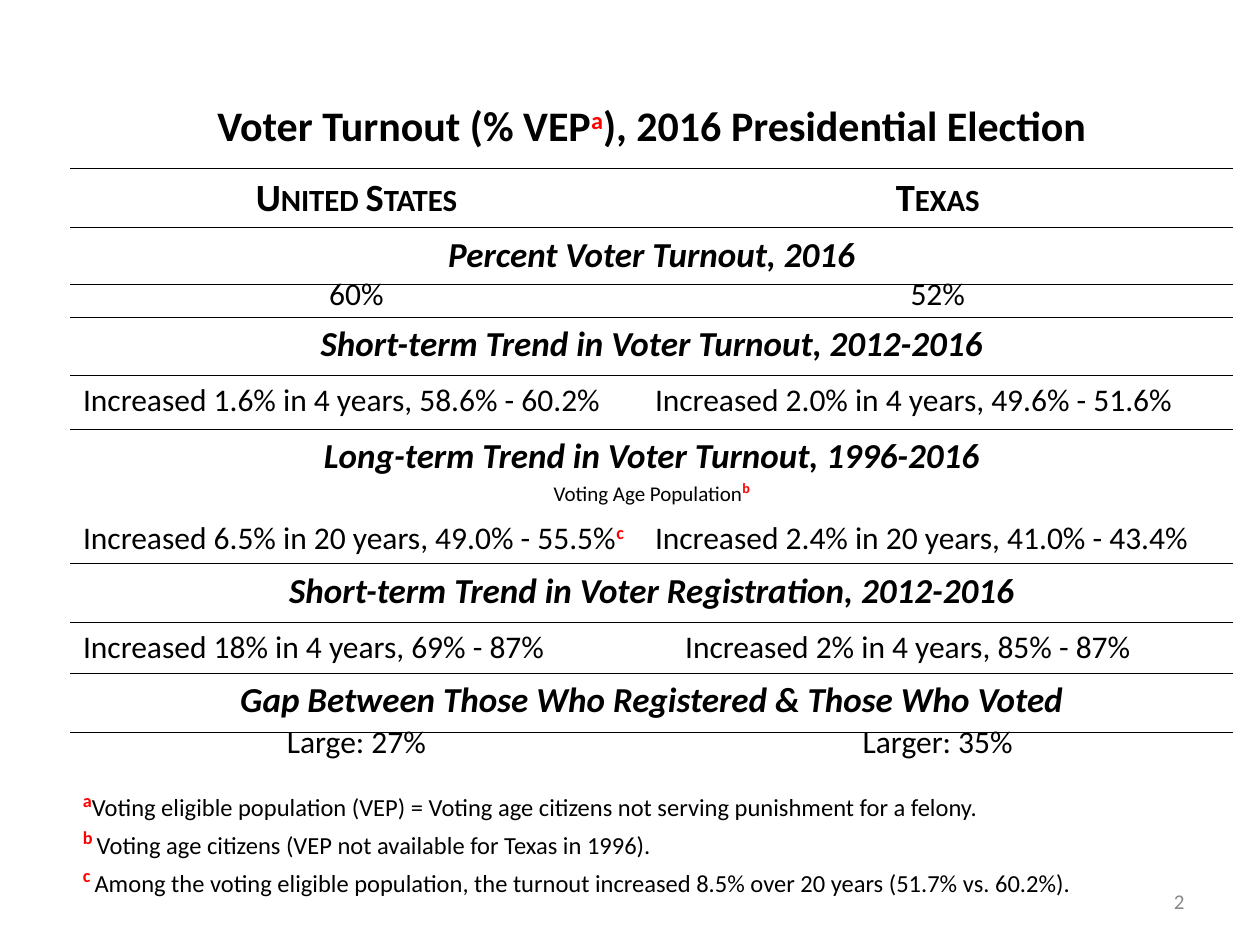
import dataclasses

import lxml.etree
import pptx
import pptx.dml.color
import pptx.enum.text
import pptx.oxml.ns
import pptx.util

Cm = pptx.util.Cm
ALIGN = pptx.enum.text.PP_ALIGN
ANCHOR = pptx.enum.text.MSO_ANCHOR


@dataclasses.dataclass(frozen=True)
class Style:
    """Look of one run of text."""
    size: int
    color: str = "000000"
    bold: bool = False
    italic: bool = False
    raised: bool = False
    small_caps: bool = False


@dataclasses.dataclass(frozen=True)
class Theme:
    """Font, rule and text styles of the slide."""
    font: str = "Calibri"
    rule_color: str = "000000"
    rule_width: float = 0.25
    title: Style = Style(24, bold=True)
    title_mark: Style = Style(24, "FF0000", bold=True, raised=True)
    place: Style = Style(22, bold=True, small_caps=True)
    section: Style = Style(20, bold=True, italic=True)
    subtitle: Style = Style(12)
    subtitle_mark: Style = Style(14, "FF0000", bold=True, raised=True)
    body: Style = Style(18)
    mark: Style = Style(18, "FF0000", bold=True, raised=True)
    note: Style = Style(14)
    page: Style = Style(12, "898989")


THEME = Theme()
CENTER, LEFT = ALIGN.CENTER, ALIGN.LEFT


def section(height, title, *more):
    """Describe a row with one heading across all columns."""
    return height, CENTER, 1, [(0, 2, [[(title, THEME.section)], *more])], True


def pair(height, us, texas, style=THEME.body, align=LEFT, spacing=1, split=1, ruled=True):
    """Describe a row with one entry for each place; split is the column where Texas starts."""
    us_runs = us if isinstance(us, list) else [(us, style)]
    cells = [(0, split - 1, [us_runs]), (split, 2, [[(texas, style)]])]
    return height, align, spacing, cells, ruled


COLUMNS = [11.53, 0.33, 11.3]
LONG_TERM = section(0.89, "Long-term Trend in Voter Turnout, 1996-2016",
                    [("Voting Age Population", THEME.subtitle), ("b", THEME.subtitle_mark)])
ROWS = [
    (1.47, CENTER, 1, [(0, 2, [[("Voter Turnout (% VEP", THEME.title), ("a", THEME.title_mark),
                                ("), 2016 Presidential Election", THEME.title)]])], True),
    pair(0.99, "United States", "Texas", THEME.place, CENTER),
    section(1.14, "Percent Voter Turnout, 2016"),
    pair(0.66, "60%", "52%", align=CENTER, spacing=0.5),
    section(1.17, "Short-term Trend in Voter Turnout, 2012-2016"),
    pair(1.09, "Increased 1.6% in 4 years, 58.6% - 60.2%", "Increased 2.0% in 4 years, 49.6% - 51.6%"),
    (*LONG_TERM[:-1], False),
    pair(0.66, [("Increased 6.5% in 20 years, 49.0% - 55.5%", THEME.body), ("c", THEME.mark)],
         "Increased 2.4% in 20 years, 41.0% - 43.4%"),
    section(1.19, "Short-term Trend in Voter Registration, 2012-2016"),
    pair(0.97, "Increased 18% in 4 years, 69% - 87%", "Increased 2% in 4 years, 85% - 87%", split=2),
    section(1.19, "Gap Between Those Who Registered & Those Who Voted"),
    pair(0.91, "Large: 27%", "Larger: 35%", align=CENTER, spacing=0.5, ruled=False),
]

NOTES = [
    ("a", "Voting eligible population (VEP) = Voting age citizens not serving punishment for a felony."),
    ("b ", "Voting age citizens (VEP not available for Texas in 1996)."),
    ("c ", "Among the voting eligible population, the turnout increased 8.5% over 20 years (51.7% vs. 60.2%)."),
]


def write(frame, paragraphs, align=LEFT, spacing=None):
    """Fill a text frame with paragraphs of (text, style) runs."""
    frame.word_wrap = True
    for index, runs in enumerate(paragraphs):
        paragraph = frame.add_paragraph() if index else frame.paragraphs[0]
        paragraph.alignment = align
        if spacing:
            paragraph.line_spacing = spacing
        for text, style in runs:
            run = paragraph.add_run()
            run.text = text
            run.font.name = THEME.font
            run.font.size = pptx.util.Pt(style.size)
            run.font.bold, run.font.italic = style.bold, style.italic
            run.font.color.rgb = pptx.dml.color.RGBColor.from_string(style.color)
            properties = run._r.get_or_add_rPr()
            if style.raised:
                properties.set("baseline", "30000")
            if style.small_caps:
                properties.set("cap", "small")


def set_borders(cell, ruled_above, ruled_below):
    """Give a cell its horizontal rules and clear its other sides."""
    qn = pptx.oxml.ns.qn
    sides = [("a:lnL", False), ("a:lnR", False), ("a:lnT", ruled_above), ("a:lnB", ruled_below)]
    for index, (tag, ruled) in enumerate(sides):
        line = lxml.etree.Element(qn(tag), w=str(pptx.util.Pt(THEME.rule_width)))
        if ruled:
            fill = lxml.etree.SubElement(line, qn("a:solidFill"))
            lxml.etree.SubElement(fill, qn("a:srgbClr"), val=THEME.rule_color)
        else:
            lxml.etree.SubElement(line, qn("a:noFill"))
        cell._tc.get_or_add_tcPr().insert(index, line)


def add_turnout_table(slide, left, top):
    """Place the table comparing the two electorates."""
    width, height = sum(COLUMNS), sum(row[0] for row in ROWS)
    table = slide.shapes.add_table(len(ROWS), len(COLUMNS), Cm(left), Cm(top), Cm(width), Cm(height)).table
    table.first_row = table.horz_banding = False
    for column, column_width in zip(table.columns, COLUMNS):
        column.width = Cm(column_width)
    ruled_above = False
    for index, (row_height, align, spacing, cells, ruled) in enumerate(ROWS):
        table.rows[index].height = Cm(row_height)
        for cell in table.rows[index].cells:
            cell.fill.background()
            set_borders(cell, ruled_above, ruled)
        for first, last, paragraphs in cells:
            entry = table.cell(index, first)
            if last > first:
                entry.merge(table.cell(index, last))
            write(entry.text_frame, paragraphs, align, spacing)
        ruled_above = ruled


def add_notes(slide, left, top, width, height):
    """Place the lettered notes under the table."""
    frame = slide.shapes.add_textbox(Cm(left), Cm(top), Cm(width), Cm(height)).text_frame
    write(frame, [[(letter, THEME.mark), (note, THEME.note)] for letter, note in NOTES])


def add_page_number(slide, left, top, width, height):
    """Place the page number at the right of its box."""
    frame = slide.shapes.add_textbox(Cm(left), Cm(top), Cm(width), Cm(height)).text_frame
    frame.vertical_anchor = ANCHOR.MIDDLE
    write(frame, [[("2", THEME.page)]], ALIGN.RIGHT)


def main():
    """Build and save the slide."""
    deck = pptx.Presentation()
    deck.slide_width, deck.slide_height = Cm(25.4), Cm(19.05)
    slide = deck.slides.add_slide(deck.slide_layouts[6])
    add_page_number(slide, 18.2, 17.66, 5.93, 1.01)
    add_turnout_table(slide, 1.42, 1.93)
    add_notes(slide, 1.42, 15.7, 21.51, 2.06)
    deck.save("out.pptx")


if __name__ == "__main__":
    main()
